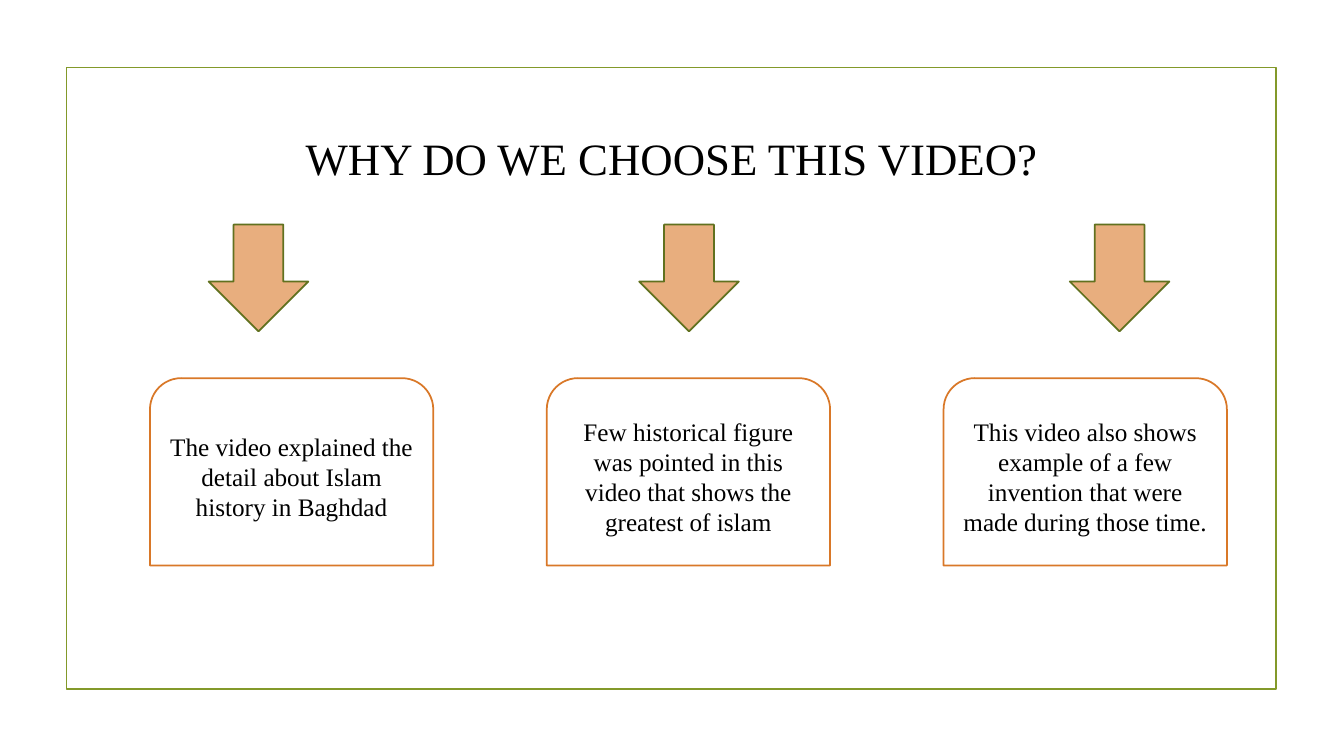
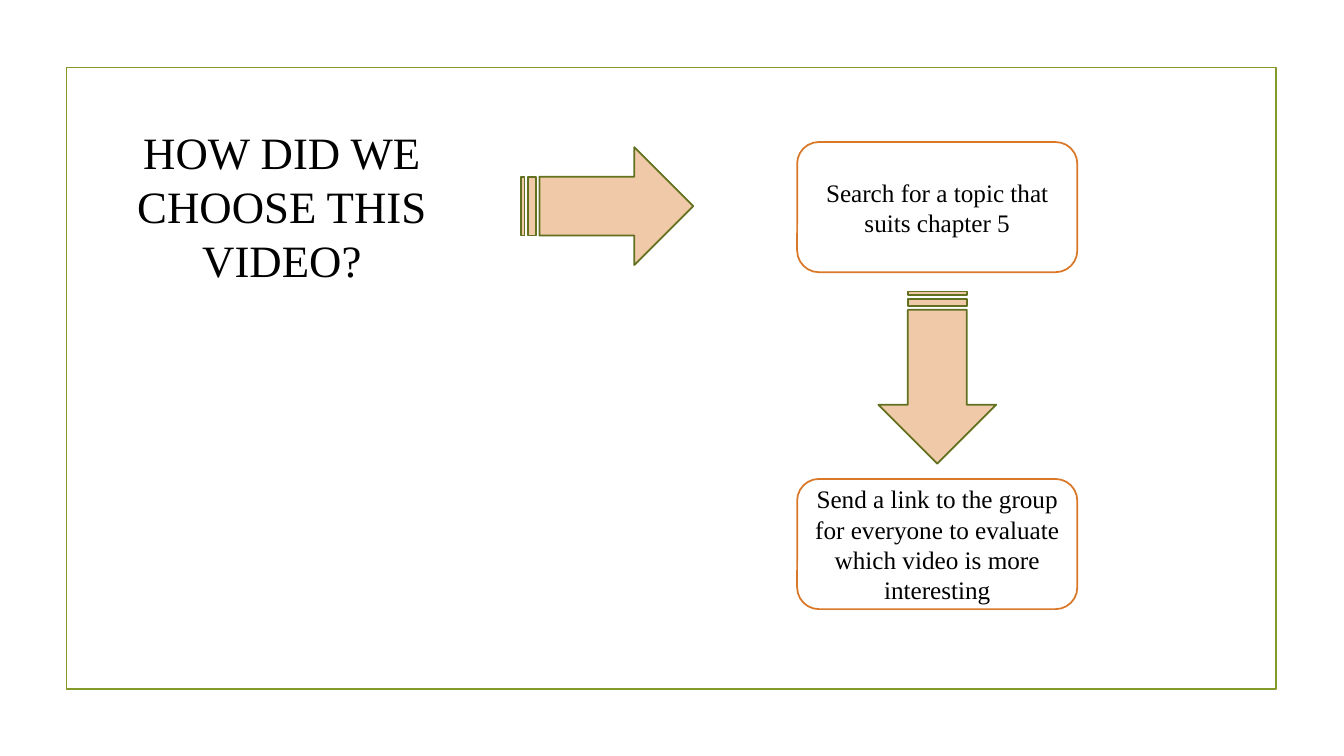
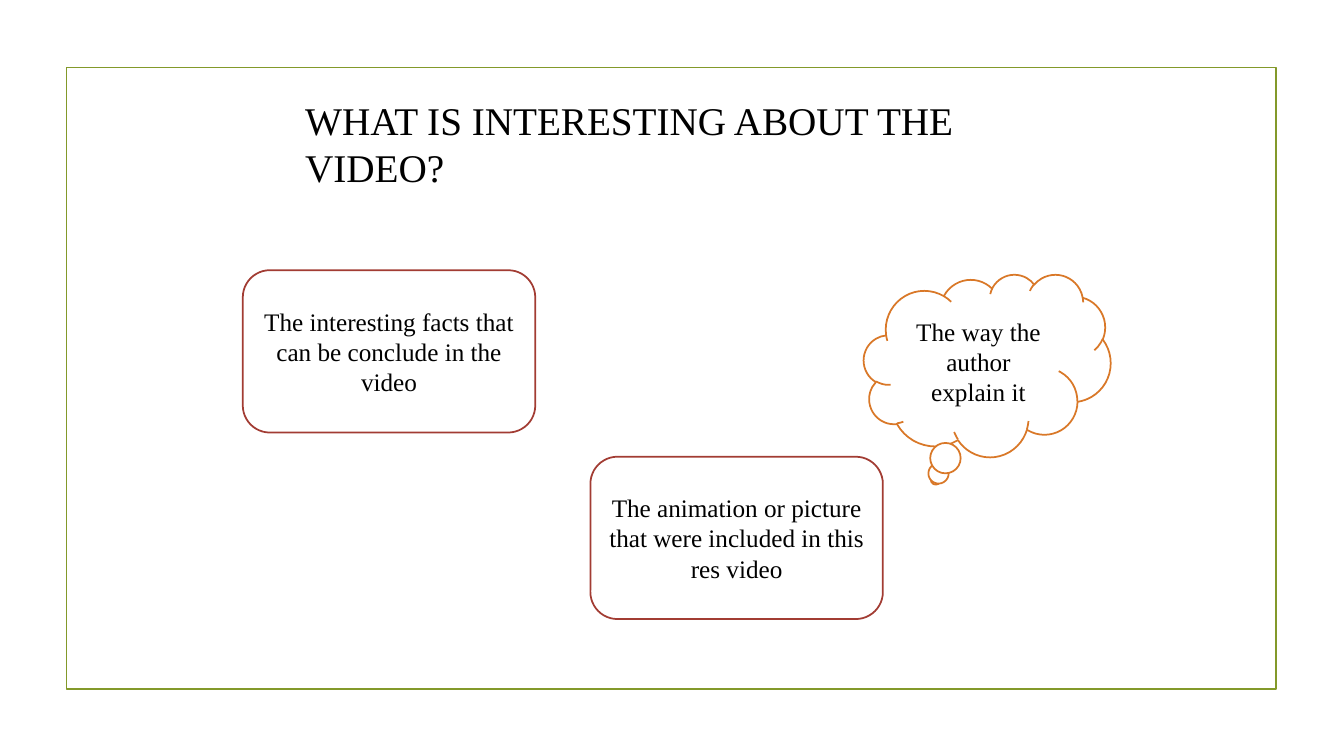
from dataclasses import dataclass
from typing import NamedTuple

from pptx import Presentation
from pptx.dml.color import RGBColor
from pptx.enum.shapes import MSO_SHAPE as Kind
from pptx.enum.text import MSO_ANCHOR as Anchor, PP_ALIGN as Align
from pptx.util import Cm, Pt


@dataclass(frozen=True)
class Theme:
    font: str = "Times New Roman"
    ink: str = "000000"
    paper: str = "FFFFFF"
    olive: str = "83992A"
    moss: str = "61711F"
    orange: str = "D97828"
    red: str = "A23C33"
    tan: str = "E8AE7E"
    peach: str = "F0C9A9"
    head: int = 32
    small: int = 28
    body: int = 18
    line: float = 1.25


class Box(NamedTuple):
    """Left, top, width and height in centimetres."""
    x: float
    y: float
    w: float
    h: float

    def inner(self, x, y, w, h):
        """A box placed from this box's top left corner."""
        return Box(self.x + x, self.y + y, w, h)

    def cm(self):
        return [Cm(round(v, 2)) for v in self]


THEME = Theme()
PAGE = Box(0, 0, 33.87, 19.05)
FRAME = Box(1.68, 1.7, 30.48, 15.67)


def write(shape, text, size=THEME.body, align=Align.CENTER, anchor=Anchor.MIDDLE):
    frame = shape.text_frame
    frame.word_wrap = True
    frame.vertical_anchor = anchor
    para = frame.paragraphs[0]
    para.alignment = align
    run = para.add_run()
    run.text = text
    run.font.name = THEME.font
    run.font.size = Pt(size)
    run.font.color.rgb = RGBColor.from_string(THEME.ink)


def draw(slide, kind, box, line, fill=None, turn=0):
    shape = slide.shapes.add_shape(kind, *box.cm())
    shape.shadow.inherit = False
    shape.rotation = turn
    if fill:
        shape.fill.solid()
        shape.fill.fore_color.rgb = RGBColor.from_string(fill)
    else:
        shape.fill.background()
    shape.line.color.rgb = RGBColor.from_string(line)
    shape.line.width = Pt(THEME.line)
    return shape


def card(slide, kind, box, text, line=THEME.orange):
    write(draw(slide, kind, box, line, THEME.paper), text)


def title(slide, box, text, size=THEME.head, align=Align.CENTER):
    write(slide.shapes.add_textbox(*box.cm()), text,
          size=size, align=align, anchor=Anchor.TOP)


def start(deck):
    """Add a blank slide with the shared frame."""
    slide = deck.slides.add_slide(deck.slide_layouts[6])
    draw(slide, Kind.RECTANGLE, FRAME, THEME.olive)
    return slide


def arrows(slide, box, count, step):
    for i in range(count):
        draw(slide, Kind.DOWN_ARROW, box.inner(i * step, 0, 2.51, box.h),
             THEME.moss, THEME.tan)


def cards(slide, box, texts):
    """Spread equal cards over the whole width of the box."""
    wide = 7.14
    step = (box.w - wide) / (len(texts) - 1)
    for i, text in enumerate(texts):
        card(slide, Kind.ROUND_2_SAME_RECTANGLE,
             box.inner(i * step, 0, wide, box.h), text)


def steps(slide, box, first, last):
    """An arrow in from the left, then two cards joined by an arrow down."""
    wide, high = 7.06, 3.28
    long, thick = 4.34, 2.97
    left = box.w - wide
    mid = left + wide / 2
    for x, y, turn in ((0, 0.13, 0), (mid - long / 2, 4.45, 90)):
        draw(slide, Kind.STRIPED_RIGHT_ARROW, box.inner(x, y, long, thick),
             THEME.moss, THEME.peach, turn)
    for y, text in ((0, first), (box.h - high, last)):
        card(slide, Kind.ROUNDED_RECTANGLE, box.inner(left, y, wide, high), text)


def ideas(slide, box, cloud, low, high):
    """A thought cloud at the right and two cards, one above the other."""
    wide, tall = 7.37, 4.09
    card(slide, Kind.CLOUD_CALLOUT,
         box.inner(box.w - 6.22, 0.1, 6.22, 4.6), cloud)
    for x, y, text in ((8.76, box.h - tall, low), (0, 0, high)):
        card(slide, Kind.ROUNDED_RECTANGLE, box.inner(x, y, wide, tall),
             text, THEME.red)


def why(deck):
    slide = start(deck)
    title(slide, Box(7.29, 3.18, 19.28, 1.63), "WHY DO WE CHOOSE THIS VIDEO?")
    arrows(slide, Box(5.26, 5.66, 24.21, 2.69), 3, 10.85)
    cards(slide, Box(3.78, 9.53, 27.14, 4.72), (
        "The video explained the detail about Islam history in Baghdad",
        "Few historical figure was pointed in this video that shows "
        "the greatest of islam",
        "This video also shows example of a few invention that were made "
        "during those time.",
    ))


def how(deck):
    slide = start(deck)
    title(slide, Box(1.07, 3.02, 12.07, 4.37), "HOW DID WE CHOOSE THIS VIDEO?")
    steps(slide, Box(13.13, 3.58, 14.02, 11.77),
          "Search for a topic that suits chapter 5",
          "Send a link to the group for everyone to evaluate which video "
          "is more interesting")


def what(deck):
    slide = start(deck)
    title(slide, Box(7.44, 2.29, 19, 2.64),
          "WHAT IS INTERESTING ABOUT THE VIDEO?",
          size=THEME.small, align=Align.LEFT)
    ideas(slide, Box(6.12, 6.81, 21.87, 8.79),
          "The way the author explain it",
          "The animation or picture that were included in this res video",
          "The interesting facts that can be conclude in the video")


def main():
    deck = Presentation()
    deck.slide_width, deck.slide_height = Cm(PAGE.w), Cm(PAGE.h)
    for make in (why, how, what):
        make(deck)
    deck.save("out.pptx")


if __name__ == "__main__":
    main()
